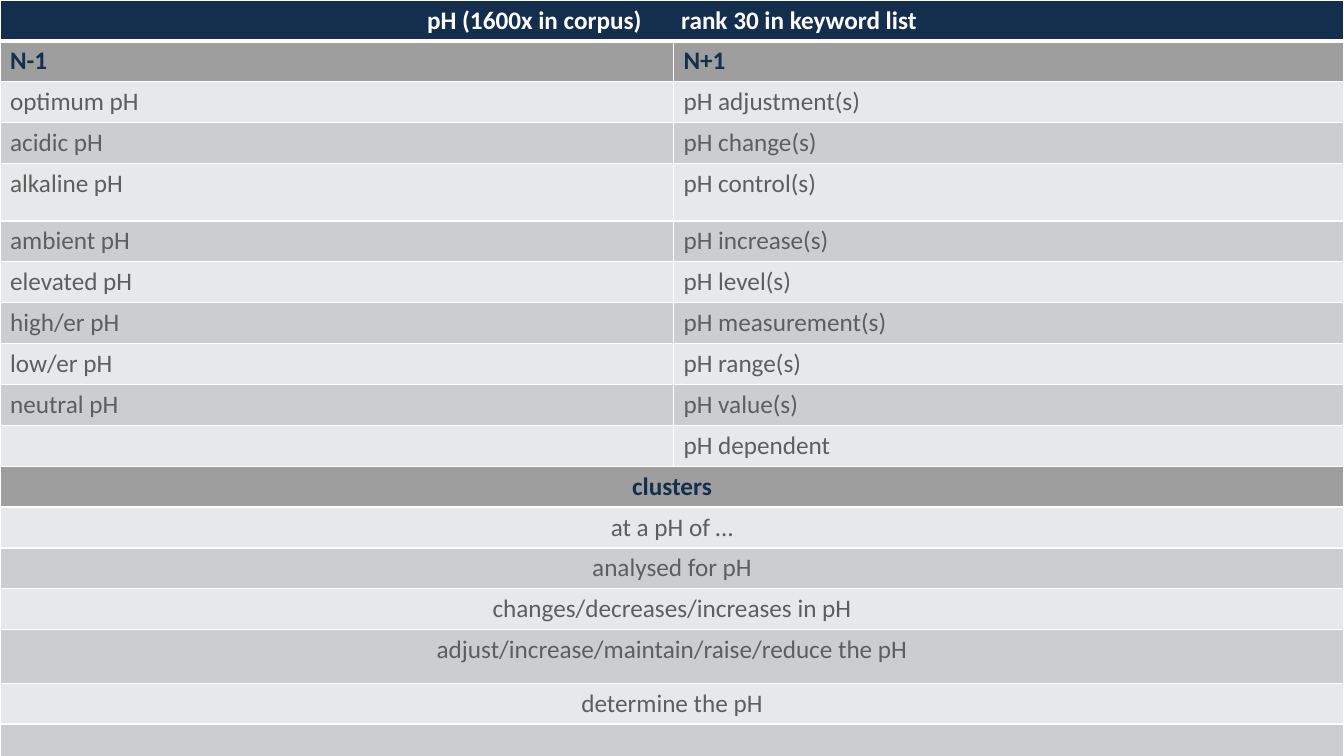
from pptx import Presentation
from pptx.dml.color import RGBColor as Rgb
from pptx.enum.text import PP_ALIGN as Align
from pptx.oxml import parse_xml as to_xml
from pptx.oxml.ns import nsdecls
from pptx.util import Pt

SCALE = 9144
WIDE, HIGH = 1333, 750
COLS = [668, 665]
ROW = 39
TALL = {0: 36, 4: 57, 15: 53}
NAVY, WHITE, GREY, TEXT = "142F4E", "FFFFFF", "9E9E9E", "5E5E5E"
BANDS = ["E7E8E9", "CCCDD0"]
TITLE = "pH (1600x in corpus)\trank 30 in keyword list"
TAB = 252
PAIRS = [
    ("optimum pH", "pH adjustment(s)"),
    ("acidic pH", "pH change(s)"),
    ("alkaline pH", "pH control(s)"),
    ("ambient pH", "pH increase(s)"),
    ("elevated pH", "pH level(s)"),
    ("high/er pH", "pH measurement(s)"),
    ("low/er pH", "pH range(s)"),
    ("neutral pH", "pH value(s)"),
    ("", "pH dependent"),
]
CLUSTERS = [
    "at a pH of …",
    "analysed for pH",
    "changes/decreases/increases in pH",
    "adjust/increase/maintain/raise/reduce the pH",
    "determine the pH",
    "",
]


def px(n):
    return n * SCALE


def color(code):
    return Rgb.from_string(code)


class Deck:
    font = "Calibri"
    size = 18

    def __init__(self):
        self.prs = Presentation()
        self.prs.slide_width, self.prs.slide_height = px(WIDE), px(HIGH)
        self.slide = self.prs.slides.add_slide(self.prs.slide_layouts[6])

    def table(self, rows, cols):
        frame = self.slide.shapes.add_table(
            len(rows), len(cols), 0, 0, px(sum(cols)), px(sum(rows)))
        grid = frame.table
        grid.first_row = grid.horz_banding = False
        for col, wide in zip(grid.columns, cols):
            col.width = px(wide)
        for row, high in zip(grid.rows, rows):
            row.height = px(high)
        return grid

    def border(self, cell, **sides):
        props = cell._tc.get_or_add_tcPr()
        for side in "LRTB":
            props.append(to_xml(
                f'<a:ln{side} {nsdecls("a")} w="{Pt(sides.get(side, 1))}">'
                f'<a:solidFill><a:srgbClr val="{WHITE}"/></a:solidFill></a:ln{side}>'))

    def cell(self, cell, text, fill, ink, bold, align):
        cell.fill.solid()
        cell.fill.fore_color.rgb = color(fill)
        para = cell.text_frame.paragraphs[0]
        para.text = text
        para.alignment = align
        if "\t" in text:
            para._p.get_or_add_pPr().append(to_xml(
                f'<a:tabLst {nsdecls("a")}><a:tab pos="{px(TAB)}" algn="l"/></a:tabLst>'))
        font = para.font
        font.name, font.size, font.bold = self.font, Pt(self.size), bold
        font.color.rgb = color(ink)

    def row(self, grid, index, texts, fill, ink=TEXT, bold=False):
        whole = len(texts) == 1
        if whole:
            grid.cell(index, 0).merge(grid.cell(index, 1))
        for col in range(len(COLS)):
            self.border(grid.cell(index, col),
                        T=3 if index == 1 else 1, B=3 if index == 0 else 1)
        for col, text in enumerate(texts):
            self.cell(grid.cell(index, col), text, fill, ink, bold,
                      Align.CENTER if whole else Align.LEFT)


def main():
    deck = Deck()
    heads = [([TITLE], NAVY, WHITE, True), (["N-1", "N+1"], GREY, NAVY, True)]
    pairs = [(pair, BANDS[i % 2]) for i, pair in enumerate(PAIRS)]
    middle = [(["clusters"], GREY, NAVY, True)]
    groups = [([text], BANDS[i % 2]) for i, text in enumerate(CLUSTERS)]
    rows = heads + pairs + middle + groups
    grid = deck.table([TALL.get(i, ROW) for i in range(len(rows))], COLS)
    for i, row in enumerate(rows):
        deck.row(grid, i, *row)
    deck.prs.save("out.pptx")


if __name__ == "__main__":
    main()
